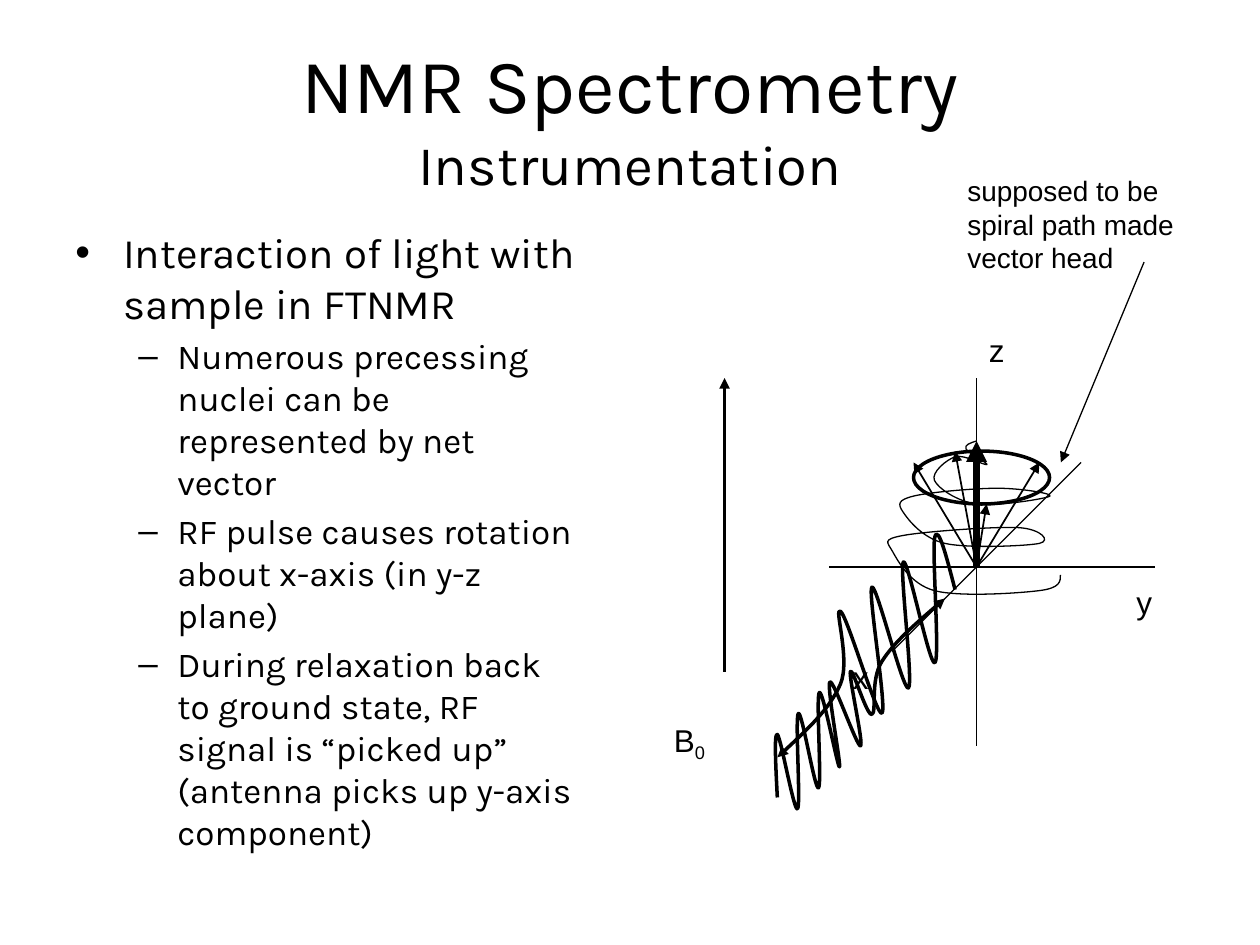
"""Build the NMR spectrometry slide with its precession diagram."""
from itertools import chain
from lxml.etree import SubElement
from pptx import Presentation
from pptx.dml.color import RGBColor
from pptx.enum.shapes import MSO_CONNECTOR as Connector, MSO_SHAPE as Shape
from pptx.enum.text import MSO_ANCHOR as Anchor, PP_ALIGN as Align
from pptx.oxml.ns import qn
from pptx.util import Inches, Pt

INK = "000000"
HAIRLINE, THIN, BOLD, HEAVY = 0.75, 1, 2, 4


def add_text(page, place, paragraphs, font):
    box = page.shapes.add_textbox(*map(Inches, place))
    frame = box.text_frame
    frame.word_wrap = True
    for index, runs in enumerate(paragraphs):
        para = frame.add_paragraph() if index else frame.paragraphs[0]
        for text, size in runs:
            if text == "\n":
                para.add_line_break()
                continue
            span = para.add_run()
            span.text = text
            for name, value in {"name": font, "size": Pt(size)}.items():
                setattr(span.font, name, value)
            span.font.color.rgb = RGBColor.from_string(INK)
    return frame


def style_line(item, width, arrow=False):
    item.line.width = Pt(width)
    item.line.color.rgb = RGBColor.from_string(INK)
    if arrow:
        SubElement(item.line._get_or_add_ln(), qn("a:tailEnd"), type="triangle")
    properties = item._element.spPr
    if properties.find(qn("a:effectLst")) is None:
        SubElement(properties, qn("a:effectLst"))


deck = Presentation()
deck.slide_width, deck.slide_height = Inches(10), Inches(7.5)
page = deck.slides.add_slide(deck.slide_layouts[6])

heading = [("NMR Spectrometry", 44), ("\n", 44), ("Instrumentation", 32)]
title = add_text(page, (0.5, 0.3, 9, 1.25), [heading], "Karla")
title.vertical_anchor = Anchor.MIDDLE
title.paragraphs[0].alignment = Align.CENTER

points = [
    ("Interaction of light with sample in FTNMR", 0),
    ("Numerous precessing nuclei can be represented by net vector", 1),
    ("RF pulse causes rotation about x-axis (in y-z plane)", 1),
    ("During relaxation back to ground state, RF signal is “picked up” "
     "(antenna picks up y-axis component)", 1),
]
levels = [
    {"size": 24, "margin": 0.38, "indent": -0.38, "bullet": "•"},
    {"size": 20, "margin": 0.81, "indent": -0.31, "bullet": "–"},
]
body = add_text(page, (0.5, 1.75, 4.17, 4.95),
                [[(text, levels[level]["size"])] for text, level in points], "Karla")
for para, (text, level) in zip(body.paragraphs, points):
    style = levels[level]
    para.level = level
    para.space_before = Pt(style["size"] * 0.2)
    settings = para._p.get_or_add_pPr()
    for name, length in {"marL": style["margin"], "indent": style["indent"]}.items():
        settings.set(name, str(Inches(length)))
    SubElement(settings, qn("a:buFont"), typeface="Arial")
    SubElement(settings, qn("a:buChar"), char=style["bullet"])

field = add_text(page, (5.25, 5.67, 0.92, 0.4), [[("B", 18), ("0", 18)]], "Arial")
field.paragraphs[0].runs[1].font._element.set("baseline", "-25000")
for letter, left, top in [("z", 7.75, 2.58), ("x", 6.67, 5.17), ("y", 8.92, 4.58)]:
    add_text(page, (left, top, 0.83, 0.4), [[(letter, 18)]], "Arial")
add_text(page, (7.58, 1.33, 2, 0.9),
         [[("supposed to be spiral path made vector head", 16)]], "Arial")

center_x, center_y = origin = (7.75, 4.5)
net_tip = (center_x, 3.5)
field_arrow = ((5.75, 5.33), (5.75, 3), BOLD, True)
note_pointer = ((9.08, 2.08), (8.42, 3.67), HAIRLINE, True)
axes = [
    ((6.58, center_y), (9.17, center_y), HAIRLINE, False),
    ((center_x, 3), (center_x, 5.92), HAIRLINE, False),
    ((7.08, 5.17), (8.58, 3.67), HAIRLINE, False),
]
nuclei_tips = [(8.25, 3.67), (7.83, 4), (7.58, 3.58), (7.25, 3.67)]
nuclei = [(origin, tip, THIN, True) for tip in nuclei_tips]
net_vector = (origin, net_tip, HEAVY, True)
for start, end, width, arrow in [field_arrow, *axes, *nuclei, net_vector, note_pointer]:
    line = page.shapes.add_connector(Connector.STRAIGHT, *map(Inches, start + end))
    style_line(line, width, arrow)

cone_rim = page.shapes.add_shape(Shape.OVAL, *map(Inches, (7.25, 3.58, 1.08, 0.42)))
cone_rim.shadow.inherit = False
cone_rim.fill.background()
style_line(cone_rim, BOLD)

step = 1 / 6
incoming_crests = [(6.17 + step * k, 5.83 - step * k) for k in (0, 1, 2, 2.5)]
incoming_troughs = [(6.33 + step * k, 6.42 - step * k) for k in range(4)]
incoming_wave = [(6.17, 6.33), *chain(*zip(incoming_crests, incoming_troughs)),
                 (6.75, 5.33), (6.92, 5.67), (7, 5.25), (7.5, 4.75)]

outgoing_crests = [(7.42 - 0.25 * k, 4.26 + 0.2 * k) for k in range(3)]
outgoing_troughs = [(7.42 - 0.21 * k, 5.26 + 0.2 * k) for k in range(3)]
outgoing_wave = [(7.58, 4.68), *chain(*zip(outgoing_crests, outgoing_troughs)),
                 (6.67, 4.85), (6.67, 5.43), (6.17, 6.01)]

column, row = 1 / 12, 1 / 16
spiral_turns = {
    "bottom": [(8, 17), (6, 19), (-4, 19), (-8, 14), (-7, 12)],
    "lower": [(4, 11), (6, 13), (-3, 13), (-7, 9), (-6, 7)],
    "upper": [(2, 6), (7, 7), (0, 8), (-4, 5), (-2, 2)],
    "top": [(1, 3), (-1, 1), (0, 0)],
}
spiral = [(net_tip[0] + column * across, net_tip[1] + row * down)
          for across, down in chain(*spiral_turns.values())]

for knots, width, arrow in [(incoming_wave, BOLD, True), (outgoing_wave, BOLD, True),
                            (spiral, HAIRLINE, False)]:
    tangents = [((after[0] - before[0]) / 6, (after[1] - before[1]) / 6)
                for before, after in zip(knots, knots[2:])]
    leaving = [(x + dx, y + dy) for (x, y), (dx, dy) in zip(knots[1:], tangents)]
    arriving = [(x - dx, y - dy) for (x, y), (dx, dy) in zip(knots[1:], tangents)]
    first_handle = tuple((a + b) / 2 for a, b in zip(knots[0], arriving[0]))
    last_handle = tuple((a + b) / 2 for a, b in zip(leaving[-1], knots[-1]))
    handles = zip([first_handle, *leaving], [*arriving, last_handle], knots[1:])
    nodes = [(Inches(x), Inches(y)) for x, y in chain(knots[:1], *handles)]

    builder = page.shapes.build_freeform(*nodes[0])
    builder.add_line_segments(nodes[1:], close=False)
    curve = builder.convert_to_shape()
    segments = list(curve._element.iter(qn("a:lnTo")))
    outline = segments[0].getparent()
    for first in range(0, len(segments), 3):
        bend = SubElement(outline, qn("a:cubicBezTo"))
        for segment in segments[first:first + 3]:
            bend.append(segment[0])
            outline.remove(segment)
    curve.shadow.inherit = False
    curve.fill.background()
    style_line(curve, width, arrow)

deck.save("out.pptx")
